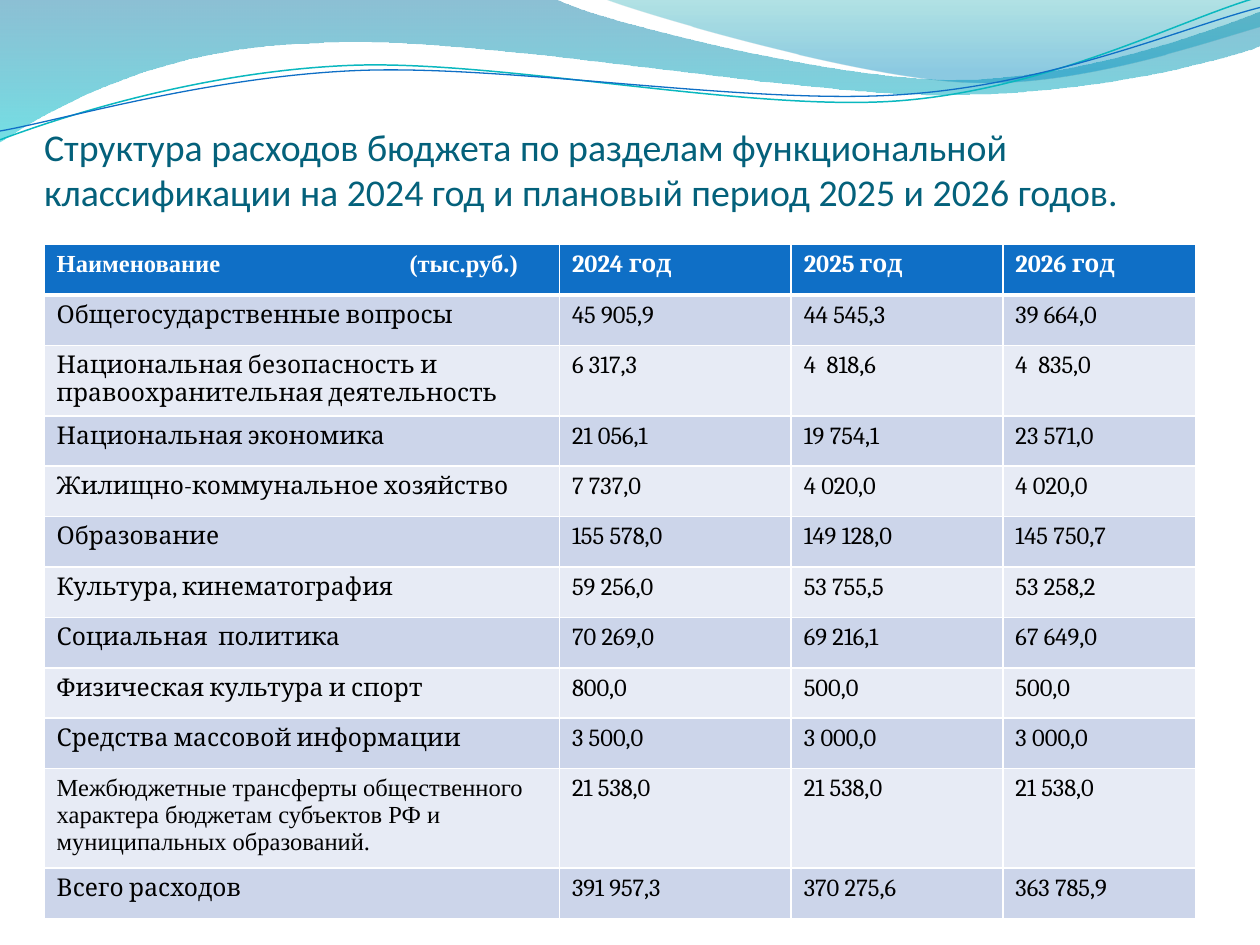
from math import cos, radians, sin

from lxml.etree import SubElement
from pptx import Presentation
from pptx.dml.color import RGBColor
from pptx.enum.text import MSO_ANCHOR, MSO_AUTO_SIZE, PP_ALIGN
from pptx.oxml.ns import qn
from pptx.util import Inches, Pt

HUES = {
    "title": "04617B", "head": "0F6FC6", "odd": "CCD5EA", "even": "E7EBF5",
    "white": "FFFFFF", "black": "000000", "teal": "0AB8BF",
    "deep": "0074A1", "aqua": "00C6CF", "sea": "00A1A9", "sky": "008BBF",
}

deck = Presentation()
deck.slide_width, deck.slide_height = Inches(10), Inches(7.5)
slide = deck.slides.add_slide(deck.slide_layouts[5])


def hue(name):
    return RGBColor.from_string(HUES[name])


def wave(parts, closed, tilt=0, hub=(0, 0)):
    """Draw an outline; two numbers are a straight step, six a Bezier curve."""
    turn, dots = radians(tilt), []
    for part in parts:
        for x, y in zip(part[::2], part[1::2]):
            x, y = x - hub[0], y - hub[1]
            dots.append(((hub[0] + x * cos(turn) - y * sin(turn)) * 1000,
                         (hub[1] + x * sin(turn) + y * cos(turn)) * 1000))
    pen = slide.shapes.build_freeform(*dots[0], scale=914.4)
    pen.add_line_segments(dots[1:], close=closed)
    shape = pen.convert_to_shape()
    shape.shadow.inherit = False
    shape.rotation = -tilt
    # Join each three steps of a curve into one Bezier segment
    steps = iter(list(shape._element.iter(qn("a:lnTo"))))
    for part in parts[1:]:
        first = next(steps)
        if len(part) == 6:
            first.tag = qn("a:cubicBezTo")
            for spare in (next(steps), next(steps)):
                first.append(spare[0])
                spare.getparent().remove(spare)
    return shape


# Translucent bands: outline, then gradient stops as (place, colour, opacity)
bands = [
    ([(0, 0), (4.4, -0.01), (4.76, 0.17, 6.64, 0.63, 7.58, 0.63),
      (8.53, 0.63, 9.58, 0.26, 10, 0.09), (10.01, 0.36),
      (9.83, 0.44, 8.7, 0.76, 7.46, 0.75), (6.22, 0.75, 3.82, 0.28, 2.57, 0.34),
      (1.29, 0.36, 0.46, 0.83, -0.01, 1.13), (0, 0)],
     [(0, "deep", 45), (1, "aqua", 55)]),
    ([(4.79, -0.01), (5.09, 0.11, 6.82, 0.62, 7.69, 0.65),
      (8.56, 0.69, 9.61, 0.32, 10, 0.21), (10, 0), (4.79, -0.01)],
     [(0, "sea", 30), (0.8, "sky", 45)]),
]
for parts, stops in bands:
    band = wave(parts, True)
    band.line.fill.background()
    band.fill.gradient()
    band.fill.gradient_angle = 270
    for stop, (place, name, _) in zip(band.fill.gradient_stops, stops):
        stop.position = place
        stop.color.rgb = hue(name)
    for tint, (_, _, alpha) in zip(band._element.spPr.iter(qn("a:srgbClr")), stops):
        SubElement(tint, qn("a:alpha"), val=str(alpha * 1000))

# Thin wavy lines, tilted about their middles
curves = [
    ("teal", 0.85, (4.99, 0.58),
     [(0, 1.11), (0.48, 0.93, 1.58, 0.57, 2.77, 0.52),
      (3.95, 0.47, 5.93, 0.89, 7.13, 0.8), (8.33, 0.71, 9.38, 0.15, 9.98, -0.02)]),
    ("head", 0.75, (5, 0.59),
     [(0, 1.04), (0.47, 0.96, 1.64, 0.61, 2.83, 0.56),
      (4.03, 0.51, 5.97, 0.84, 7.17, 0.75), (8.36, 0.67, 9.41, 0.21, 10, 0.06)]),
]
for name, width, hub, parts in curves:
    curve = wave(parts, False, 2.7, hub)
    curve.fill.background()
    curve.line.color.rgb = hue(name)
    curve.line.width = Pt(width)

# Title
left, wide = Inches(0.35), Inches(9.15)
title = slide.shapes.title
title.left, title.top, title.width, title.height = left, Inches(0.6), wide, Inches(1.1)
frame = title.text_frame
frame.word_wrap, frame.auto_size = True, MSO_AUTO_SIZE.NONE
frame.vertical_anchor = MSO_ANCHOR.BOTTOM
frame.margin_left = frame.margin_right = frame.margin_bottom = 0
frame.margin_top = Inches(0.05)
line = frame.paragraphs[0]
line.alignment = PP_ALIGN.LEFT
run = line.add_run()
run.text = ("Структура расходов бюджета по разделам функциональной "
            "классификации на 2024 год и плановый период 2025 и 2026 годов.")
run.font.name, run.font.size = "Calibri", Pt(21.6)
run.font.color.rgb = hue("title")

# Budget table
rows = [
    ("Наименование\t(тыс.руб.)", "2024 год", "2025 год", "2026 год"),
    ("Общегосударственные вопросы", "45 905,9", "44 545,3", "39 664,0"),
    ("Национальная безопасность и правоохранительная деятельность",
     "6 317,3", "4  818,6", "4  835,0"),
    ("Национальная экономика", "21 056,1", "19 754,1", "23 571,0"),
    ("Жилищно-коммунальное хозяйство", "7 737,0", "4 020,0", "4 020,0"),
    ("Образование", "155 578,0", "149 128,0", "145 750,7"),
    ("Культура, кинематография", "59 256,0", "53 755,5", "53 258,2"),
    ("Социальная  политика", "70 269,0", "69 216,1", "67 649,0"),
    ("Физическая культура и спорт", "800,0", "500,0", "500,0"),
    ("Средства массовой информации", "3 500,0", "3 000,0", "3 000,0"),
    ("Межбюджетные трансферты общественного характера бюджетам субъектов РФ "
     "и муниципальных образований.", "21 538,0", "21 538,0", "21 538,0"),
    ("Всего расходов", "391 957,3", "370 275,6", "363 785,9"),
]
tall = {2: 0.56, 10: 0.79}
grid = slide.shapes.add_table(len(rows), 4, left, Inches(1.94), wide, Inches(5.37)).table
for col, width in zip(grid.columns, (4.09, 1.84, 1.68, 1.53)):
    col.width = Inches(width)

for r, row in enumerate(rows):
    grid.rows[r].height = Inches(tall.get(r, 0.4))
    for c, text in enumerate(row):
        cell = grid.cell(r, c)
        run = cell.text_frame.paragraphs[0].add_run()
        run.text = text
        font = run.font
        font.name = "Times New Roman" if c == 0 and r in (0, 10) else "Cambria"
        font.size, font.bold = Pt(14), r == 0
        font.color.rgb = hue("black" if r else "white")
        # White borders, thicker under the header
        props = cell._tc.get_or_add_tcPr()
        for side in ("L", "R", "T", "B"):
            thick = 3 if (r, side) in ((0, "B"), (1, "T")) else 1
            edge = SubElement(props, qn("a:ln" + side), w=str(Pt(thick)))
            SubElement(SubElement(edge, qn("a:solidFill")), qn("a:srgbClr"), val=HUES["white"])
        cell.fill.solid()
        cell.fill.fore_color.rgb = hue("head" if r == 0 else "odd" if r % 2 else "even")

# Tab stop for the unit in the header
head = grid.cell(0, 0).text_frame.paragraphs[0]
tabs = SubElement(head._p.get_or_add_pPr(), qn("a:tabLst"))
SubElement(tabs, qn("a:tab"), pos=str(Inches(2.8)), algn="l")

deck.save("out.pptx")
